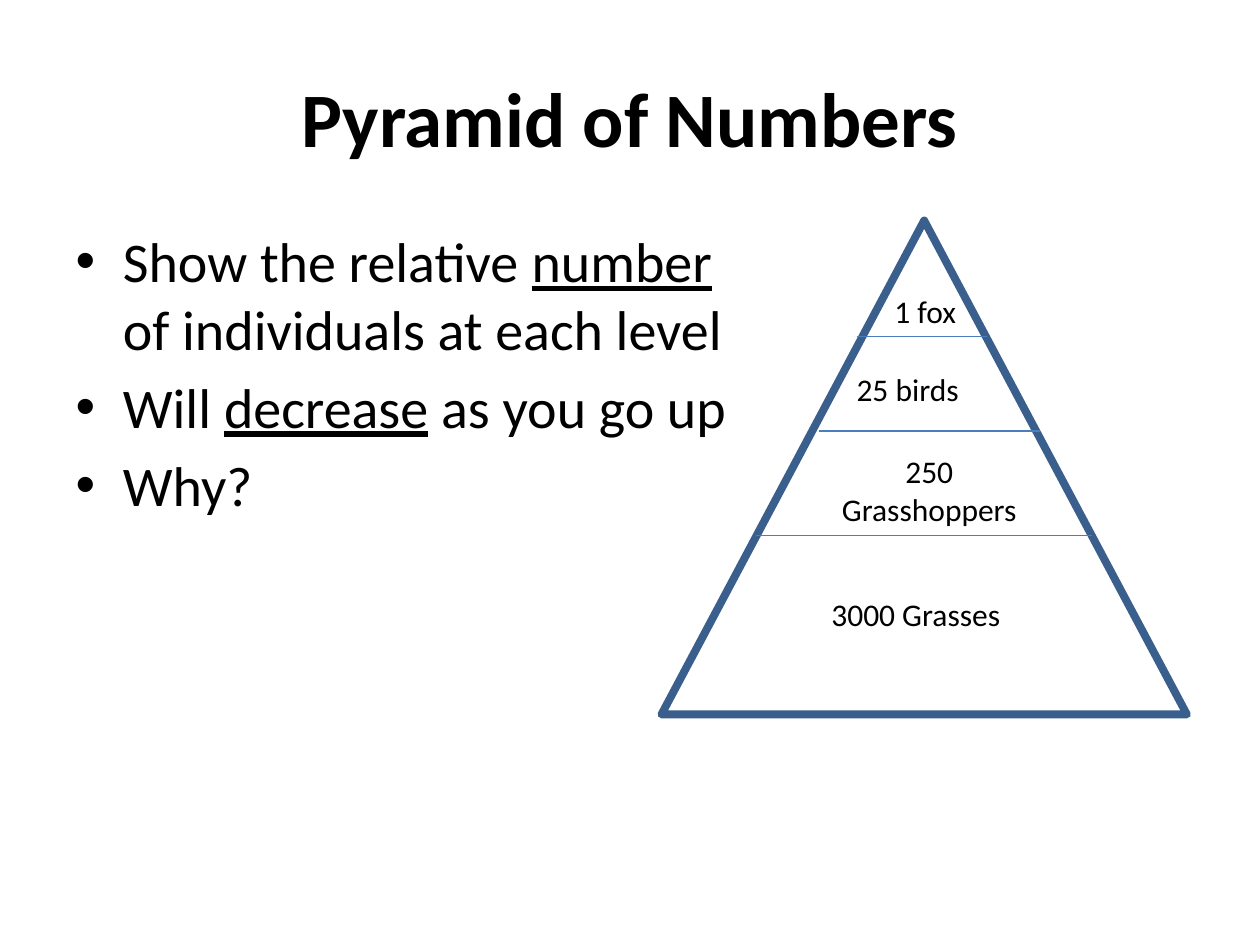
"""Build the Pyramid of Numbers slide."""
from typing import NamedTuple

from lxml.etree import SubElement
from pptx import Presentation
from pptx.dml.color import RGBColor
from pptx.enum.shapes import MSO_CONNECTOR as Connector, MSO_SHAPE as Shape
from pptx.enum.text import MSO_ANCHOR as Anchor, MSO_AUTO_SIZE as AutoSize, PP_ALIGN as Align
from pptx.oxml.ns import qn
from pptx.util import Inches, Pt

BLACK = RGBColor(0x00, 0x00, 0x00)
OUTLINE = RGBColor(0x3A, 0x5F, 0x8C)
DIVIDER = RGBColor(0x4B, 0x7E, 0xBC)

TITLE_FORMAT = {"name": "Calibri", "size": Pt(44), "bold": True}
BULLET_FORMAT = {"name": "Calibri", "size": Pt(32)}
LEVEL_FORMAT = {"name": "Calibri", "size": Pt(18)}


class Box(NamedTuple):
    left: float
    top: float
    width: float
    height: float


class Level(NamedTuple):
    label: str
    box: Box
    align: Align = Align.LEFT


class Divider(NamedTuple):
    left: float
    right: float
    y: float


class Point(NamedTuple):
    before: str
    key_word: str = ""
    after: str = ""


POINTS = [
    Point("Show the relative ", "number", " of individuals at each level"),
    Point("Will ", "decrease", " as you go up"),
    Point("Why?"),
]
DIVIDERS = [Divider(6, 8.67, 4.25), Divider(6.5, 8.25, 3.42), Divider(6.8, 7.83, 2.67)]
LEVELS = [
    Level("3000 Grasses", Box(6.5, 4.67, 1.75, 0.4)),
    Level("250 Grasshoppers", Box(6.5, 3.54, 1.75, 0.71), Align.CENTER),
    Level("25 birds", Box(6.7, 2.89, 1.13, 0.4)),
    Level("1 fox", Box(7, 2.27, 0.83, 0.4)),
]


def inches(box: Box) -> list[Inches]:
    return [Inches(length) for length in box]


def place(placeholder, box: Box) -> None:
    for side, length in zip(Box._fields, inches(box)):
        setattr(placeholder, side, length)


def add_run(paragraph, text: str, text_format: dict) -> None:
    run = paragraph.add_run()
    run.text = text
    run.font.color.rgb = BLACK
    for attribute, value in text_format.items():
        setattr(run.font, attribute, value)


def fill_points(frame, points: list[Point]) -> None:
    for index, point in enumerate(points):
        paragraph = frame.add_paragraph() if index else frame.paragraphs[0]
        for text, underline in zip(point, (False, True, False)):
            if text:
                add_run(paragraph, text, BULLET_FORMAT | {"underline": underline})


def draw_pyramid(shapes, box: Box) -> None:
    pyramid = shapes.add_shape(Shape.ISOSCELES_TRIANGLE, *inches(box))
    pyramid.shadow.inherit = False
    pyramid.fill.background()
    pyramid.line.color.rgb = OUTLINE
    pyramid.line.width = Pt(4.5)


def draw_divider(shapes, divider: Divider) -> None:
    y = Inches(divider.y)
    line = shapes.add_connector(
        Connector.STRAIGHT, Inches(divider.left), y, Inches(divider.right), y
    )
    line.line.color.rgb = DIVIDER
    line.line.width = Pt(0.75)
    SubElement(line._element.spPr, qn("a:effectLst"))


def draw_level(shapes, level: Level) -> None:
    frame = shapes.add_textbox(*inches(level.box)).text_frame
    frame.word_wrap = True
    frame.auto_size = AutoSize.SHAPE_TO_FIT_TEXT
    label = frame.paragraphs[0]
    label.alignment = level.align
    add_run(label, level.label, LEVEL_FORMAT)


def main() -> None:
    deck = Presentation()
    deck.slide_width, deck.slide_height = Inches(10), Inches(7.5)
    slide = deck.slides.add_slide(deck.slide_layouts[1])
    shapes = slide.shapes

    heading, body = shapes.title, slide.placeholders[1]
    place(heading, Box(0.5, 0.3, 9, 1.25))
    heading.text_frame.vertical_anchor = Anchor.MIDDLE
    add_run(heading.text_frame.paragraphs[0], "Pyramid of Numbers", TITLE_FORMAT)
    place(body, Box(0.5, 1.75, 5.42, 2.58))
    fill_points(body.text_frame, POINTS)

    draw_pyramid(shapes, Box(5.25, 1.75, 4.17, 3.92))
    for divider in DIVIDERS:
        draw_divider(shapes, divider)
    for level in LEVELS:
        draw_level(shapes, level)
    deck.save("out.pptx")


if __name__ == "__main__":
    main()
